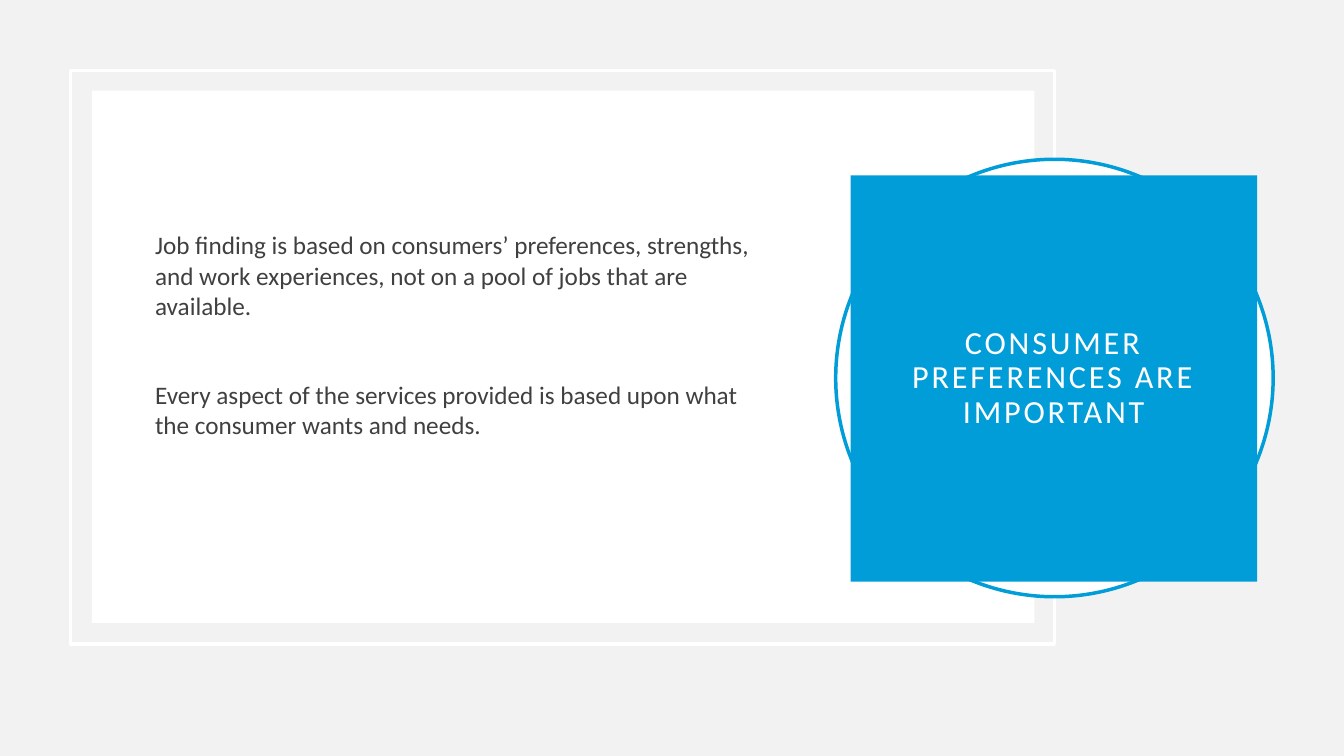
"""Build a slide with a framed text card and a blue title badge."""
import dataclasses
import typing

import pptx
import pptx.dml.color
import pptx.enum.shapes
import pptx.enum.text
import pptx.util

WIDE = pptx.util.Inches(13.333)
HIGH = pptx.util.Inches(7.5)
HUES = {"back": "F2F2F2", "card": "FFFFFF", "badge": "009DD9", "ink": "404040"}
KINDS = pptx.enum.shapes.MSO_SHAPE
ALIGN = pptx.enum.text.PP_ALIGN


@dataclasses.dataclass(frozen=True)
class Box:
    """A place in percent of the slide's width and height."""
    left: float
    top: float
    width: float
    height: float

    def spots(self) -> tuple[int, int, int, int]:
        """Return the place in slide units."""
        return (round(WIDE * self.left / 100), round(HIGH * self.top / 100),
                round(WIDE * self.width / 100), round(HIGH * self.height / 100))


@dataclasses.dataclass(frozen=True)
class Panel:
    """A plain shape with an optional fill and outline."""
    kind: KINDS
    box: Box
    fill: str | None = None
    line: str | None = None


PANELS = (
    Panel(KINDS.RECTANGLE, Box(5.25, 9.33, 73.2, 75.87), line="card"),
    Panel(KINDS.RECTANGLE, Box(6.83, 12, 70.13, 70.4), fill="card"),
    Panel(KINDS.OVAL, Box(62.18, 21.07, 32.55, 57.87), fill="card", line="badge"),
)
BODY = Box(10.8, 18.67, 46.88, 57.07)
BADGE = Box(63.3, 23.2, 30.23, 53.73)
POINTS = (
    "Job finding is based on consumers’ preferences, strengths, "
    "and work experiences, not on a pool of jobs that are available.",
    "Every aspect of the services provided is based upon what "
    "the consumer wants and needs.",
)


def tint(name: str) -> pptx.dml.color.RGBColor:
    """Look up a colour by name."""
    return pptx.dml.color.RGBColor.from_string(HUES[name])


def paint(fill: typing.Any, name: str | None) -> None:
    """Give a fill a solid colour, or none."""
    if name is None:
        fill.background()
    else:
        fill.solid()
        fill.fore_color.rgb = tint(name)


def draw(slide: typing.Any, panel: Panel) -> None:
    """Add one panel to the slide."""
    shape = slide.shapes.add_shape(panel.kind, *panel.box.spots())
    shape.shadow.inherit = False
    paint(shape.fill, panel.fill)
    paint(shape.line.fill, panel.line)
    if panel.line:
        shape.line.width = pptx.util.Pt(2.5)


def write(frame: typing.Any, *lines: str, size: float, hue: str, align: ALIGN,
          pads: tuple[float, float, float, float], lead: float = 1,
          first: float = 0, gap: float = 0, track: int = 0) -> None:
    """Fill a text frame with evenly formatted paragraphs."""
    frame.word_wrap = True
    frame.auto_size = pptx.enum.text.MSO_AUTO_SIZE.NONE
    frame.vertical_anchor = pptx.enum.text.MSO_ANCHOR.MIDDLE
    (frame.margin_left, frame.margin_top,
     frame.margin_right, frame.margin_bottom) = map(pptx.util.Inches, pads)
    for rank, line in enumerate(lines):
        para = frame.add_paragraph() if rank else frame.paragraphs[0]
        para.alignment = align
        para.line_spacing = lead
        para.space_before = pptx.util.Pt(gap if rank else first)
        run = para.add_run()
        run.text = line
        run.font.name = "Calibri"
        run.font.size = pptx.util.Pt(size)
        run.font.color.rgb = tint(hue)
        if track:
            run.font._element.set("spc", str(track))


def main() -> None:
    """Build and save the slide."""
    deck = pptx.Presentation()
    deck.slide_width, deck.slide_height = WIDE, HIGH
    slide = deck.slides.add_slide(deck.slide_layouts[5])
    paint(slide.background.fill, "back")
    for panel in PANELS:
        draw(slide, panel)
    body = slide.shapes.add_textbox(*BODY.spots())
    write(body.text_frame, *POINTS, size=18, hue="ink", align=ALIGN.LEFT,
          pads=(0.1, 0.05, 0.1, 0.49), first=10, gap=42)
    title = slide.shapes.title
    title.left, title.top, title.width, title.height = BADGE.spots()
    paint(title.fill, "badge")
    write(title.text_frame, "CONSUMER PREFERENCES ARE IMPORTANT", size=23,
          hue="card", align=ALIGN.CENTER, pads=(0.2,) * 4, lead=0.9, track=200)
    slide.shapes._spTree.append(title._element)
    deck.save("out.pptx")


if __name__ == "__main__":
    main()
